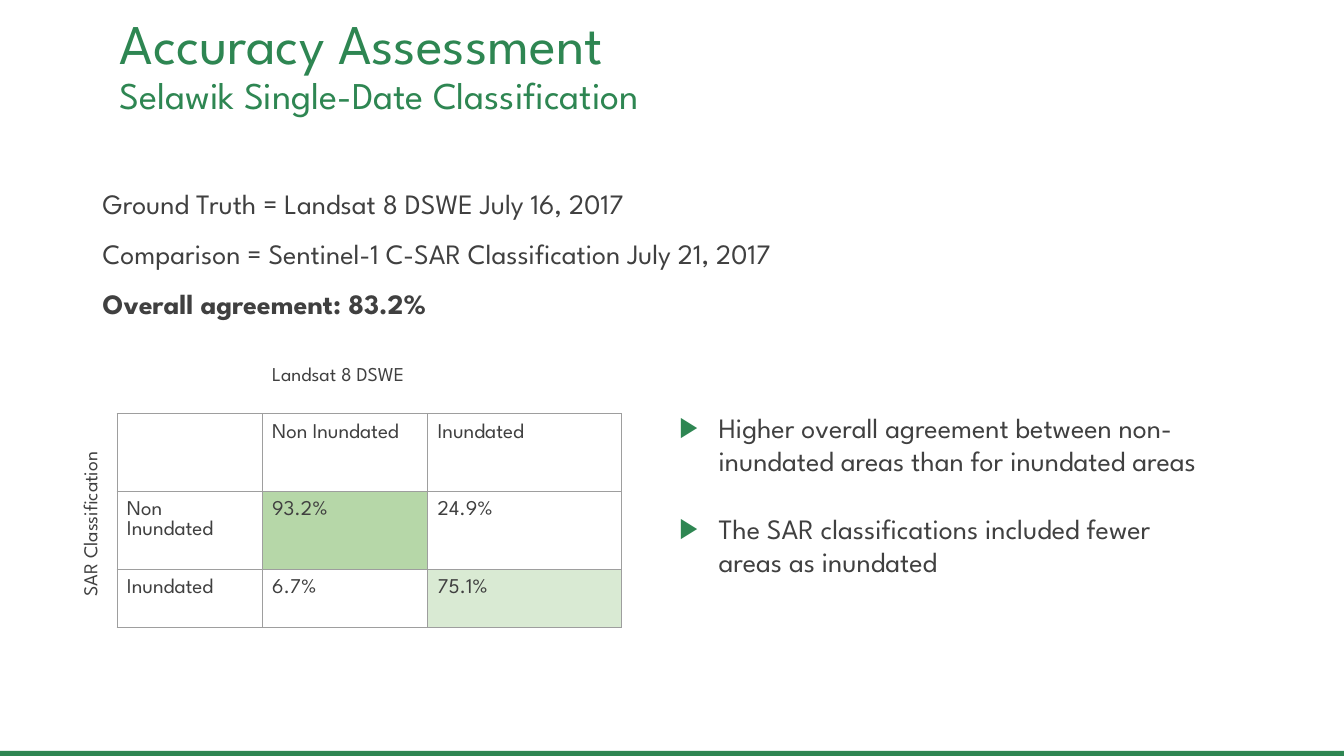
from dataclasses import dataclass

import lxml.etree
import pptx
import pptx.dml.color
import pptx.enum.shapes
import pptx.enum.text
import pptx.oxml.ns
import pptx.util

Cm = pptx.util.Cm
Pt = pptx.util.Pt
qn = pptx.oxml.ns.qn


@dataclass(frozen=True)
class Theme:
    font: str = "League Spartan"
    green: str = "2E8652"
    text: str = "404040"
    border: str = "9E9E9E"
    strong_match: str = "B6D7A8"
    weak_match: str = "D9EAD3"
    title_size: int = 40
    subtitle_size: int = 27
    body_size: int = 20
    cell_size: int = 15
    label_size: int = 14
    border_width: float = 0.75


@dataclass(frozen=True)
class Box:
    """Left, top, width and height in centimetres."""
    left: float
    top: float
    width: float
    height: float

    def lengths(self):
        return Cm(self.left), Cm(self.top), Cm(self.width), Cm(self.height)


@dataclass(frozen=True)
class Line:
    text: str
    size: int
    color: str
    bold: bool = False
    spacing: float = 1.0


@dataclass(frozen=True)
class Note:
    box: Box
    lines: tuple[Line, ...]
    rotation: int = 0
    vertical_inset: float = 0.25
    grows: bool = False


THEME = Theme()
INSET = 0.25

TITLE_BOX = Box(2.77, 1.02, 26.11, 1.32)
TITLE_LINES = (
    Line("Accuracy Assessment", THEME.title_size, THEME.green, spacing=0.9),
    Line("Selawik Single-Date Classification", THEME.subtitle_size, THEME.green, spacing=0.9),
)

NOTES = (
    Note(Box(-0.36, 12.32, 5.03, 0.89),
         (Line("SAR Classification", THEME.label_size, THEME.text),), rotation=270),
    Note(Box(2.34, 6.96, 10.85, 0.79),
         (Line("Overall agreement: 83.2%", THEME.body_size, THEME.text, bold=True),)),
    Note(Box(2.34, 4.14, 21.03, 2.82),
         tuple(Line(text, THEME.body_size, THEME.text, spacing=1.5) for text in (
             "Ground Truth = Landsat 8 DSWE July 16, 2017",
             "Comparison = Sentinel-1 C-SAR Classification July 21, 2017")),
         vertical_inset=0.13, grows=True),
)

FINDINGS_BOX = Box(16.59, 8.66, 14.33, 7.37)
FINDINGS_TOP_INSET = 1.68
FINDINGS = (
    "Higher overall agreement between non-inundated areas than for inundated areas",
    "The SAR classifications included fewer areas as inundated",
)

MATRIX_BOX = Box(2.95, 9.02, 12.71, 6.79)
MATRIX_COLUMNS = (3.66, 4.17, 4.88)
MATRIX_ROWS = (1.4, 1.96, 1.96, 1.47)
MATRIX = (
    ("", "Landsat 8 DSWE", ""),
    ("", "Non Inundated", "Inundated"),
    ("Non Inundated", "93.2%", "24.9%"),
    ("Inundated", "6.7%", "75.1%"),
)
MATRIX_FILLS = {(2, 1): THEME.strong_match, (3, 2): THEME.weak_match}


def rgb(color: str) -> pptx.dml.color.RGBColor:
    return pptx.dml.color.RGBColor.from_string(color)


def write_line(paragraph, line: Line) -> None:
    paragraph.text = line.text
    paragraph.alignment = pptx.enum.text.PP_ALIGN.LEFT
    paragraph.line_spacing = line.spacing
    paragraph.space_before = Pt(0)
    font = paragraph.font
    font.name = THEME.font
    font.size = Pt(line.size)
    font.bold = line.bold
    font.color.rgb = rgb(line.color)


def write_lines(text_frame, lines: tuple[Line, ...]) -> None:
    for index, line in enumerate(lines):
        paragraph = text_frame.add_paragraph() if index else text_frame.paragraphs[0]
        write_line(paragraph, line)


def set_frame(text_frame, top: float, bottom: float, grows: bool = False) -> None:
    sizes = pptx.enum.text.MSO_AUTO_SIZE
    text_frame.word_wrap = True
    text_frame.auto_size = sizes.SHAPE_TO_FIT_TEXT if grows else sizes.NONE
    text_frame.margin_left = text_frame.margin_right = Cm(INSET)
    text_frame.margin_top = Cm(top)
    text_frame.margin_bottom = Cm(bottom)


def place(shape, box: Box) -> None:
    shape.left, shape.top, shape.width, shape.height = box.lengths()


def add_bullet(paragraph) -> None:
    properties = paragraph._p.get_or_add_pPr()
    properties.set("marL", str(Cm(1.27)))
    properties.set("indent", str(Cm(-0.99)))
    color = lxml.etree.SubElement(properties, qn("a:buClr"))
    lxml.etree.SubElement(color, qn("a:srgbClr"), val=THEME.green)
    lxml.etree.SubElement(properties, qn("a:buChar"), char="▶")


def add_borders(cell, sides: str) -> None:
    """Draw the given sides of a cell, in the order L, R, T, B."""
    properties = cell._tc.get_or_add_tcPr()
    for side in sides:
        line = lxml.etree.SubElement(properties, qn(f"a:ln{side}"), w=str(Pt(THEME.border_width)))
        fill = lxml.etree.SubElement(line, qn("a:solidFill"))
        lxml.etree.SubElement(fill, qn("a:srgbClr"), val=THEME.border)


def draw_title(slide) -> None:
    title = slide.shapes.title
    place(title, TITLE_BOX)
    set_frame(title.text_frame, 0.13, 0.13)
    title.text_frame.vertical_anchor = pptx.enum.text.MSO_ANCHOR.MIDDLE
    write_lines(title.text_frame, TITLE_LINES)


def draw_findings(slide) -> None:
    body = slide.placeholders[1]
    place(body, FINDINGS_BOX)
    text_frame = body.text_frame
    set_frame(text_frame, FINDINGS_TOP_INSET, INSET)
    text_frame.vertical_anchor = pptx.enum.text.MSO_ANCHOR.TOP
    for index, finding in enumerate(FINDINGS):
        paragraph = text_frame.add_paragraph() if index else text_frame.paragraphs[0]
        add_bullet(paragraph)
        write_line(paragraph, Line(finding, THEME.body_size, THEME.text))
        if index:
            paragraph.space_before = Pt(24)


def draw_note(slide, note: Note) -> None:
    shape = slide.shapes.add_textbox(*note.box.lengths())
    shape.rotation = note.rotation
    set_frame(shape.text_frame, note.vertical_inset, note.vertical_inset, note.grows)
    write_lines(shape.text_frame, note.lines)


def draw_matrix(slide) -> None:
    table = slide.shapes.add_table(len(MATRIX_ROWS), len(MATRIX_COLUMNS),
                                   *MATRIX_BOX.lengths()).table
    table.first_row = table.horz_banding = False
    for column, width in zip(table.columns, MATRIX_COLUMNS):
        column.width = Cm(width)
    for row, height in zip(table.rows, MATRIX_ROWS):
        row.height = Cm(height)
    table.cell(0, 1).merge(table.cell(0, 2))
    for row_index, texts in enumerate(MATRIX):
        for column_index, text in enumerate(texts):
            cell = table.cell(row_index, column_index)
            add_borders(cell, "LRTB" if row_index else "B")
            cell.margin_left = cell.margin_right = Cm(INSET)
            cell.margin_top = cell.margin_bottom = Cm(INSET)
            color = MATRIX_FILLS.get((row_index, column_index))
            if color:
                cell.fill.solid()
                cell.fill.fore_color.rgb = rgb(color)
            else:
                cell.fill.background()
            if text:
                size = THEME.cell_size if row_index else THEME.label_size
                write_line(cell.text_frame.paragraphs[0], Line(text, size, THEME.text))


def draw_footer_bar(slide) -> None:
    bar = slide.shapes.add_shape(pptx.enum.shapes.MSO_SHAPE.RECTANGLE,
                                 *Box(0, 18.92, 33.87, 0.13).lengths())
    bar.shadow.inherit = False
    bar.fill.solid()
    bar.fill.fore_color.rgb = rgb(THEME.green)
    bar.line.fill.background()


def main() -> None:
    presentation = pptx.Presentation()
    presentation.slide_width, presentation.slide_height = Cm(33.87), Cm(19.05)
    slide = presentation.slides.add_slide(presentation.slide_layouts[1])
    draw_footer_bar(slide)
    draw_title(slide)
    draw_matrix(slide)
    for note in NOTES:
        draw_note(slide, note)
    draw_findings(slide)
    presentation.save("out.pptx")


if __name__ == "__main__":
    main()
